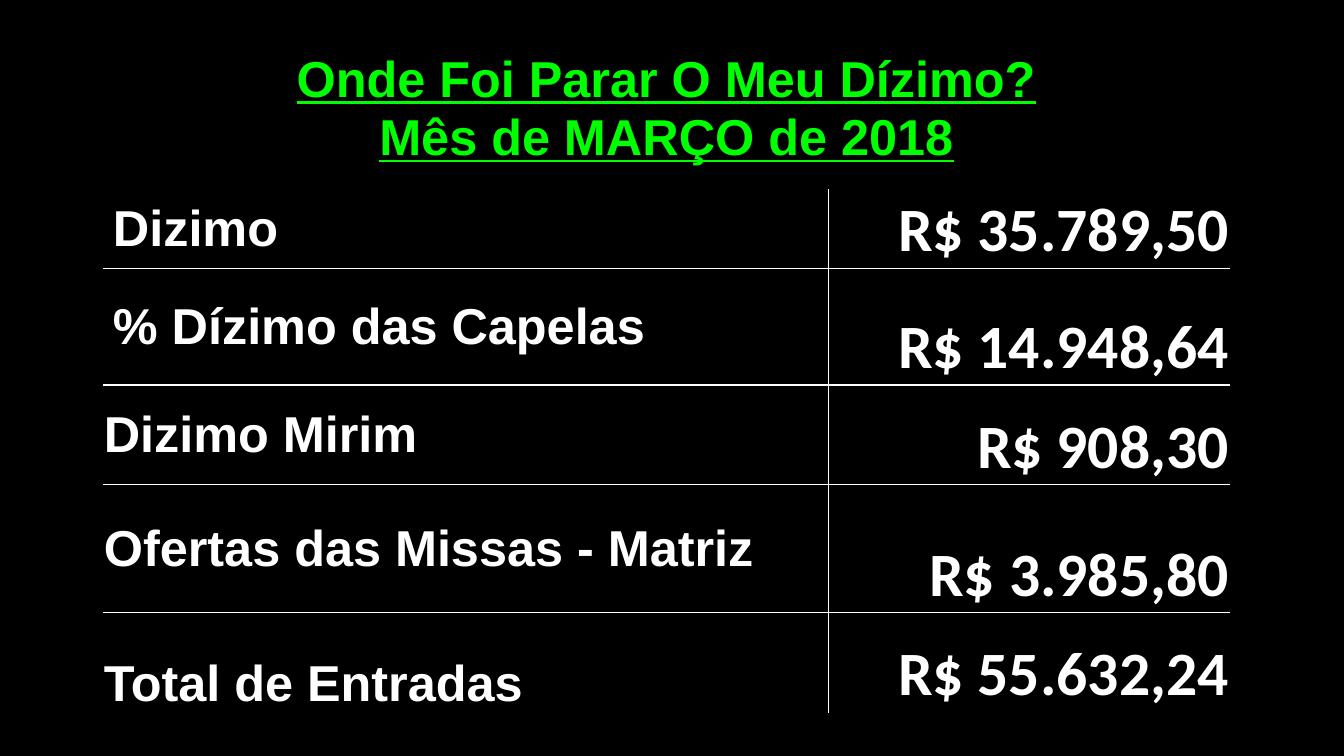
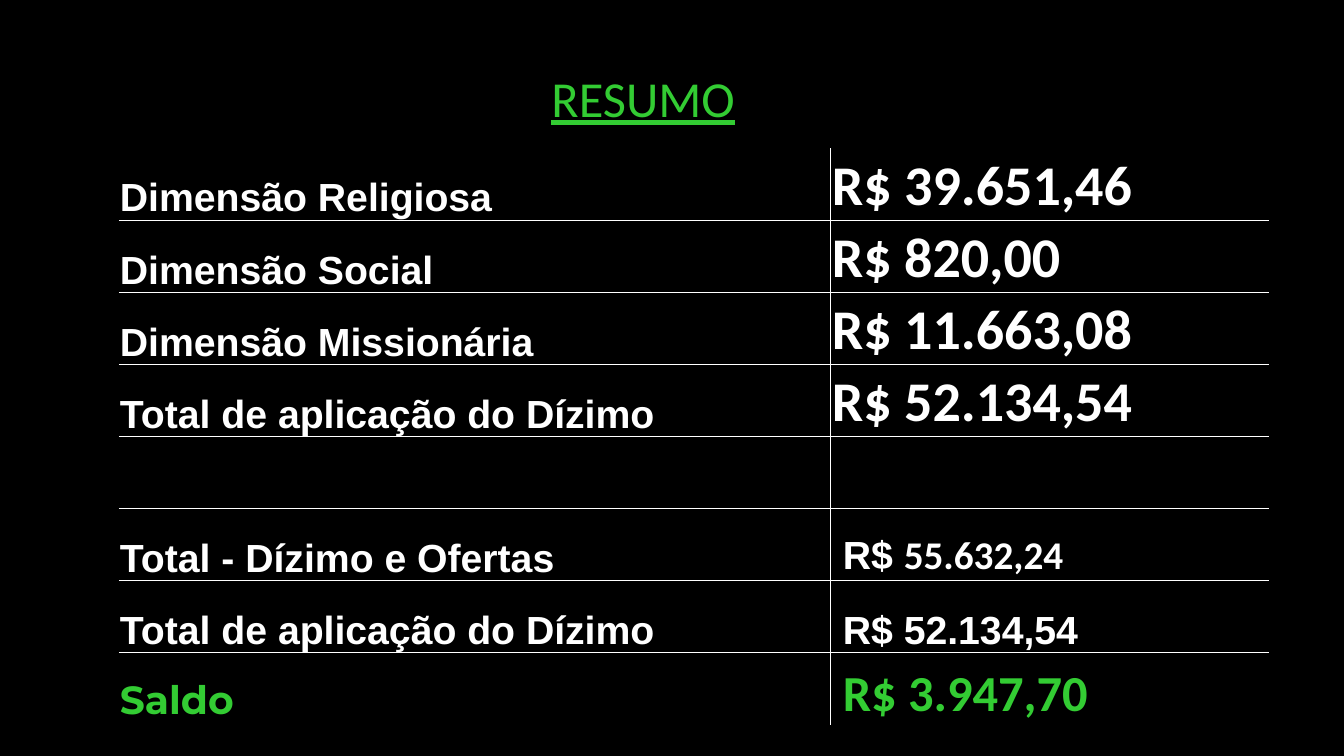
from dataclasses import dataclass

from lxml import etree
from pptx import Presentation
from pptx.dml.color import RGBColor
from pptx.enum.text import MSO_ANCHOR, PP_ALIGN
from pptx.oxml.ns import qn
from pptx.util import Inches, Pt

WHITE = RGBColor(0xFF, 0xFF, 0xFF)
BLACK = RGBColor(0x00, 0x00, 0x00)
LIME = RGBColor(0x00, 0xFF, 0x00)
GREEN = RGBColor(0x33, 0xCC, 0x33)
LEFT, CENTER, RIGHT = PP_ALIGN.LEFT, PP_ALIGN.CENTER, PP_ALIGN.RIGHT
MIDDLE, BOTTOM = MSO_ANCHOR.MIDDLE, MSO_ANCHOR.BOTTOM
THIN_MARGIN = 0.01
INDENT = 0.1
TITLE_SIZE = 36


@dataclass(frozen=True)
class Span:
    text: str
    size: int
    font: str = "Arial"
    color: RGBColor = WHITE
    bold: bool = True
    underline: bool = False


@dataclass(frozen=True)
class Entry:
    spans: tuple[Span, ...]
    align: PP_ALIGN = LEFT
    anchor: MSO_ANCHOR = BOTTOM
    margin_left: float = THIN_MARGIN


@dataclass(frozen=True)
class Grid:
    left: float
    top: float
    columns: list[float]
    rows: list[float]
    entries: list[list[Entry]]
    ruled: bool = True


def title_span(text: str, font: str, color: RGBColor, bold: bool) -> Span:
    return Span(text, TITLE_SIZE, font, color, bold, underline=True)


def label(text: str, size: int, anchor: MSO_ANCHOR = BOTTOM,
          margin_left: float = THIN_MARGIN) -> Entry:
    return Entry((Span(text, size),), anchor=anchor, margin_left=margin_left)


def amount(text: str, size: int, align: PP_ALIGN = LEFT) -> Entry:
    return Entry((Span(text, size, "Calibri"),), align)


def balance(*spans: Span) -> Entry:
    return Entry(spans, margin_left=0.12)


def write_spans(paragraph, spans: tuple[Span, ...], align: PP_ALIGN) -> None:
    paragraph.alignment = align
    for span in spans:
        run = paragraph.add_run()
        run.text = span.text
        font = run.font
        font.size, font.name = Pt(span.size), span.font
        font.bold, font.underline = span.bold, span.underline
        font.color.rgb = span.color


def set_borders(cell, visible: dict[str, bool]) -> None:
    """Rule the sides marked True and clear the others."""
    properties = cell._tc.get_or_add_tcPr()
    for side, shown in visible.items():
        line = etree.SubElement(properties, qn(f"a:ln{side}"), w=str(Pt(1)))
        if shown:
            fill = etree.SubElement(line, qn("a:solidFill"))
            etree.SubElement(fill, qn("a:srgbClr"), val=str(WHITE))
        else:
            etree.SubElement(line, qn("a:noFill"))


def draw_grid(slide, grid: Grid) -> None:
    row_count, column_count = len(grid.rows), len(grid.columns)
    table = slide.shapes.add_table(
        row_count, column_count, Inches(grid.left), Inches(grid.top),
        Inches(sum(grid.columns)), Inches(sum(grid.rows))).table
    table.first_row = table.horz_banding = False
    for column, width in zip(table.columns, grid.columns):
        column.width = Inches(width)
    for row, height in zip(table.rows, grid.rows):
        row.height = Inches(height)
    for r, entries in enumerate(grid.entries):
        for c, entry in enumerate(entries):
            cell = table.cell(r, c)
            inner = {"L": c > 0, "R": c < column_count - 1,
                     "T": r > 0, "B": r < row_count - 1}
            set_borders(cell, {side: grid.ruled and shown for side, shown in inner.items()})
            cell.fill.background()
            cell.margin_left = Inches(entry.margin_left)
            cell.margin_right = cell.margin_top = Inches(THIN_MARGIN)
            cell.margin_bottom = 0
            cell.vertical_anchor = entry.anchor
            write_spans(cell.text_frame.paragraphs[0], entry.spans, entry.align)


def add_black_slide(deck):
    slide = deck.slides.add_slide(deck.slide_layouts[6])
    slide.background.fill.solid()
    slide.background.fill.fore_color.rgb = BLACK
    return slide


def build_income(deck) -> None:
    slide = add_black_slide(deck)
    income = [
        (label("Dizimo", 36, MIDDLE, INDENT), "R$ 35.789,50"),
        (label("% Dízimo das Capelas", 36, MIDDLE, INDENT), "R$ 14.948,64"),
        (label("Dizimo Mirim", 36, MIDDLE), "R$ 908,30"),
        (label("Ofertas das Missas - Matriz", 36, MIDDLE), "R$ 3.985,80"),
        (label("Total de Entradas", 36), "R$ 55.632,24"),
    ]
    draw_grid(slide, Grid(
        1.02, 1.88, [7.2, 3.98], [0.78, 1.16, 0.99, 1.27, 0.99],
        [[name, amount(value, 44, RIGHT)] for name, value in income]))
    titles = ["Onde Foi Parar O Meu Dízimo?", "Mês de MARÇO de 2018"]
    draw_grid(slide, Grid(
        2.41, 0.44, [8.4], [0.63, 0.58],
        [[Entry((title_span(text, "Arial", LIME, True),), CENTER)] for text in titles],
        ruled=False))


def build_summary(deck) -> None:
    slide = add_black_slide(deck)
    spending = [
        ("Dimensão Religiosa", "R$ 39.651,46"),
        ("Dimensão Social", "R$ 820,00"),
        ("Dimensão Missionária", "R$ 11.663,08"),
        ("Total de aplicação do Dízimo", "R$ 52.134,54"),
    ]
    entries = [[label(name, 28), amount(value, 40)] for name, value in spending]
    entries += [
        [Entry(()), Entry(())],
        [label("Total - Dízimo e Ofertas", 28),
         balance(Span("R$ ", 28), Span("55.632,24", 28, "Calibri"))],
        [label("Total de aplicação do Dízimo", 28), balance(Span("R$ 52.134,54", 28))],
        [Entry((Span("Saldo", 28, "Montserrat", GREEN),)),
         balance(Span("R$ 3.947,70", 36, "Calibri", GREEN))],
    ]
    draw_grid(slide, Grid(1.18, 1.47, [7.06, 4.35], [5.72 / len(entries)] * len(entries), entries))
    box = slide.shapes.add_textbox(Inches(2.88), Inches(0.62), Inches(7), Inches(0.71))
    box.text_frame.word_wrap = True
    write_spans(box.text_frame.paragraphs[0],
                (title_span("RESUMO", "Calibri", GREEN, False),), CENTER)


def main() -> None:
    deck = Presentation()
    deck.slide_width, deck.slide_height = Inches(13.33), Inches(7.5)
    build_income(deck)
    build_summary(deck)
    deck.save("out.pptx")


if __name__ == "__main__":
    main()
